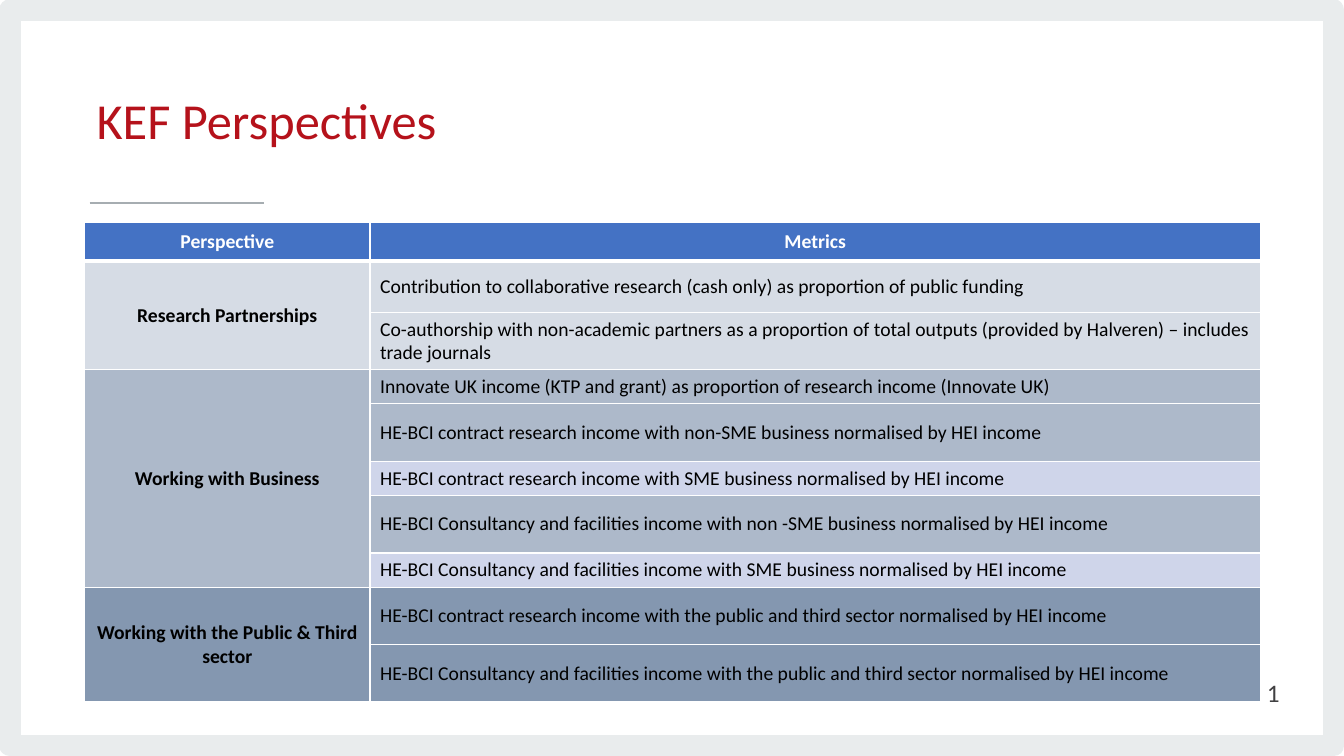
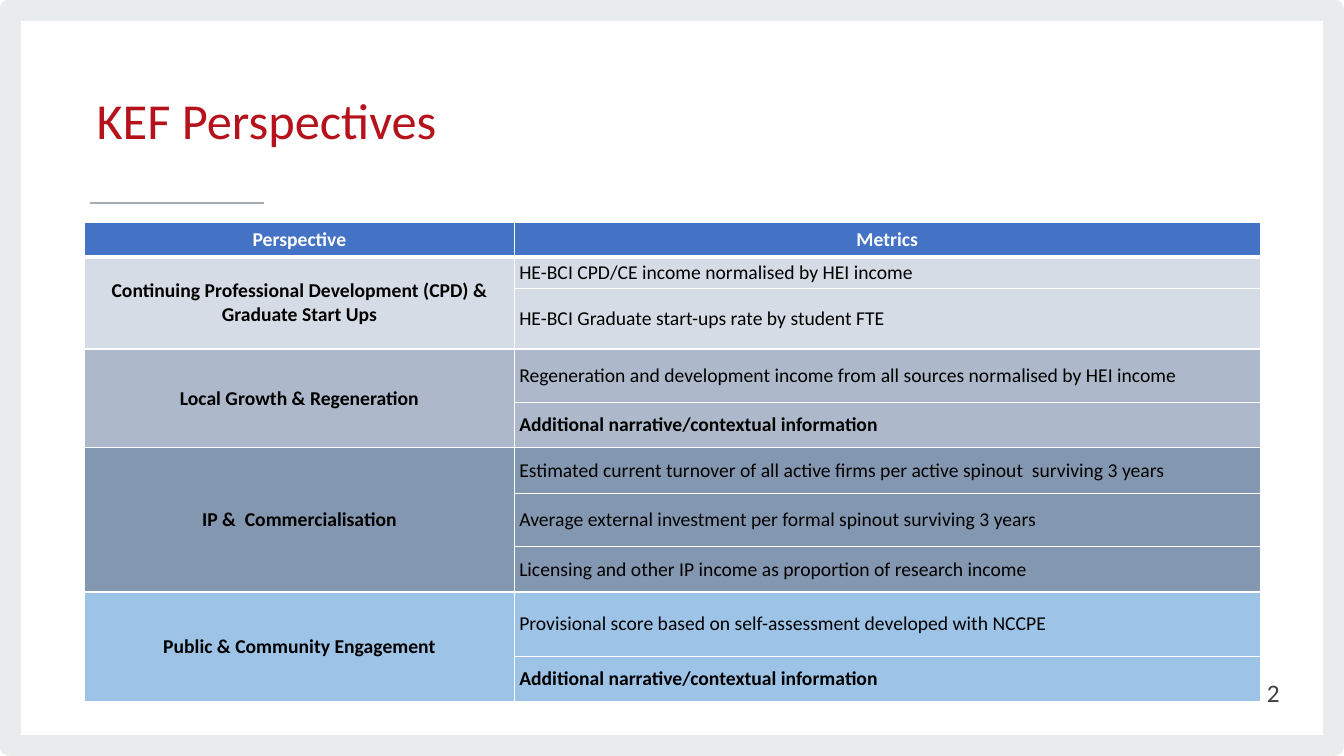
from lxml import etree
from pptx import Presentation
from pptx import util as u
from pptx.dml.color import RGBColor
from pptx.enum import shapes, text
from pptx.oxml import parse_xml
from pptx.oxml.ns import nsdecls, qn

FRAME_GREY = RGBColor(0xE9, 0xEC, 0xED)
RULE_GREY = RGBColor(0xA6, 0xAD, 0xB1)
TITLE_RED = RGBColor(0xB5, 0x12, 0x1B)
NUMBER_GREY = RGBColor(0x41, 0x40, 0x42)
WHITE = RGBColor(0xFF, 0xFF, 0xFF)
BLACK = RGBColor(0x00, 0x00, 0x00)
HEADER_BLUE = RGBColor(0x44, 0x72, 0xC4)
PALE = RGBColor(0xD6, 0xDC, 0xE5)
MEDIUM = RGBColor(0xAD, 0xB9, 0xCA)
DARK = RGBColor(0x84, 0x97, 0xB0)
SKY = RGBColor(0x9D, 0xC3, 0xE6)
LILAC = RGBColor(0xCF, 0xD5, 0xEA)

FONT = "Calibri"
TITLE = "KEF Perspectives"
HEADINGS = ["Perspective", "Metrics"]
NARRATIVE = "Additional narrative/contextual information"

PAGES = [
    {
        "columns": [2.83, 8.83],
        "header_height": 0.38,
        "margins": (0.1, 0.05),
        "groups": [
            ("Research Partnerships", PALE, [
                (0.51, "Contribution to collaborative research (cash only) as proportion of public funding"),
                (0.56, "Co-authorship with non-academic partners as a proportion of total outputs "
                       "(provided by Halveren) – includes trade journals"),
            ]),
            ("Working with Business", MEDIUM, [
                (0.34, "Innovate UK income (KTP and grant) as proportion of research income (Innovate UK)"),
                (0.57, "HE-BCI contract research income with non-SME business normalised by HEI income"),
                (0.34, "HE-BCI contract research income with SME business normalised by HEI income"),
                (0.57, "HE-BCI Consultancy and facilities income with non -SME business normalised by HEI income"),
                (0.34, "HE-BCI Consultancy and facilities income with SME business normalised by HEI income"),
            ]),
            ("Working with the Public & Third sector", DARK, [
                (0.57, "HE-BCI contract research income with the public and third sector normalised by HEI income"),
                (0.57, "HE-BCI Consultancy and facilities income with the public and third sector "
                       "normalised by HEI income"),
            ]),
        ],
    },
    {
        "columns": [4.26, 7.4],
        "header_height": 0.34,
        "margins": (0.05, 0.04),
        "groups": [
            ("Continuing Professional Development (CPD) & Graduate Start Ups", PALE, [
                (0.31, "HE-BCI CPD/CE income normalised by HEI income"),
                (0.6, "HE-BCI Graduate start-ups rate by student FTE"),
            ]),
            ("Local Growth & Regeneration", MEDIUM, [
                (0.53, "Regeneration and development income from all sources normalised by HEI income"),
                (0.45, NARRATIVE),
            ]),
            ("IP &  Commercialisation", DARK, [
                (0.45, "Estimated current turnover of all active firms per active spinout  surviving 3 years"),
                (0.53, "Average external investment per formal spinout surviving 3 years"),
                (0.45, "Licensing and other IP income as proportion of research income"),
            ]),
            ("Public & Community Engagement", SKY, [
                (0.64, "Provisional score based on self-assessment developed with NCCPE"),
                (0.45, NARRATIVE),
            ]),
        ],
    },
]


def add_run(paragraph, words, size, colour, bold=False):
    run = paragraph.add_run()
    run.text = words
    run.font.name = FONT
    run.font.size = u.Pt(size)
    run.font.bold = bold
    run.font.color.rgb = colour
    return run


def style_cell(cell, fill, margins, top=1, bottom=1):
    properties = cell._tc.get_or_add_tcPr()
    for side, width in (("L", 1), ("R", 1), ("T", top), ("B", bottom)):
        properties.append(parse_xml(
            f'<a:ln{side} {nsdecls("a")} w="{u.Pt(width)}"><a:solidFill>'
            f'<a:srgbClr val="{WHITE}"/></a:solidFill></a:ln{side}>'))
    cell.fill.solid()
    cell.fill.fore_color.rgb = fill
    cell.vertical_anchor = text.MSO_ANCHOR.MIDDLE
    cell.margin_left = cell.margin_right = u.Inches(margins[0])
    cell.margin_top = cell.margin_bottom = u.Inches(margins[1])


presentation = Presentation()
presentation.slide_width = u.Inches(13.33)
presentation.slide_height = u.Inches(7.5)

for number, page in enumerate(PAGES, start=1):
    slide = presentation.slides.add_slide(presentation.slide_layouts[6])

    frame = slide.shapes.add_shape(
        shapes.MSO_SHAPE.RECTANGLE, u.Inches(0.1), u.Inches(0.1), u.Inches(13.13), u.Inches(7.3))
    frame.shadow.inherit = False
    frame.fill.background()
    frame.line.color.rgb = FRAME_GREY
    frame.line.width = u.Pt(15.11)

    rule = slide.shapes.add_connector(
        shapes.MSO_CONNECTOR.STRAIGHT, u.Inches(0.89), u.Inches(2.01), u.Inches(2.62), u.Inches(2.01))
    rule.line.color.rgb = RULE_GREY
    rule.line.width = u.Pt(1.33)
    etree.SubElement(rule._element.spPr, qn("a:effectLst"))

    title = slide.shapes.add_textbox(u.Inches(0.86), u.Inches(0.57), u.Inches(9.2), u.Inches(1.34))
    title.text_frame.word_wrap = True
    title.text_frame.vertical_anchor = text.MSO_ANCHOR.MIDDLE
    paragraph = title.text_frame.paragraphs[0]
    paragraph.line_spacing = u.Pt(34.7)
    add_run(paragraph, TITLE, 36, TITLE_RED)

    footer = slide.shapes.add_textbox(u.Inches(9.79), u.Inches(6.67), u.Inches(3), u.Inches(0.4))
    footer.text_frame.word_wrap = True
    footer.text_frame.vertical_anchor = text.MSO_ANCHOR.MIDDLE
    paragraph = footer.text_frame.paragraphs[0]
    paragraph.alignment = text.PP_ALIGN.RIGHT
    field = add_run(paragraph, str(number), 18, NUMBER_GREY)._r
    field.tag = qn("a:fld")
    field.set("id", "{B6F15528-21DE-4FAA-801E-634DDDAF4B2B}")
    field.set("type", "slidenum")

    heights = [page["header_height"]]
    for perspective, colour, metrics in page["groups"]:
        heights += [height for height, metric in metrics]
    table = slide.shapes.add_table(
        len(heights), len(HEADINGS), u.Inches(0.84), u.Inches(2.21),
        u.Inches(sum(page["columns"])), u.Inches(sum(heights))).table
    for column, width in zip(table.columns, page["columns"]):
        column.width = u.Inches(width)
    for row, height in zip(table.rows, heights):
        row.height = u.Inches(height)

    for column_index, heading in enumerate(HEADINGS):
        cell = table.cell(0, column_index)
        style_cell(cell, HEADER_BLUE, (0.1, page["margins"][1]), bottom=3)
        paragraph = cell.text_frame.paragraphs[0]
        paragraph.alignment = text.PP_ALIGN.CENTER
        add_run(paragraph, heading, 14, WHITE, bold=True)

    first_row = 1
    for perspective, colour, metrics in page["groups"]:
        for row_index, (height, metric) in enumerate(metrics, start=first_row):
            top = 3 if row_index == 1 else 1
            style_cell(table.cell(row_index, 0), colour, page["margins"], top=top)
            cell = table.cell(row_index, 1)
            metric_fill = LILAC if "with SME" in metric else colour
            style_cell(cell, metric_fill, page["margins"], top=top)
            paragraph = cell.text_frame.paragraphs[0]
            paragraph.alignment = text.PP_ALIGN.JUSTIFY
            add_run(paragraph, metric, 14, BLACK, bold=metric == NARRATIVE)

        cell = table.cell(first_row, 0)
        cell.merge(table.cell(first_row + len(metrics) - 1, 0))
        paragraph = cell.text_frame.paragraphs[0]
        paragraph.alignment = text.PP_ALIGN.CENTER
        add_run(paragraph, perspective, 14, BLACK, bold=True)
        first_row += len(metrics)

presentation.save("out.pptx")
